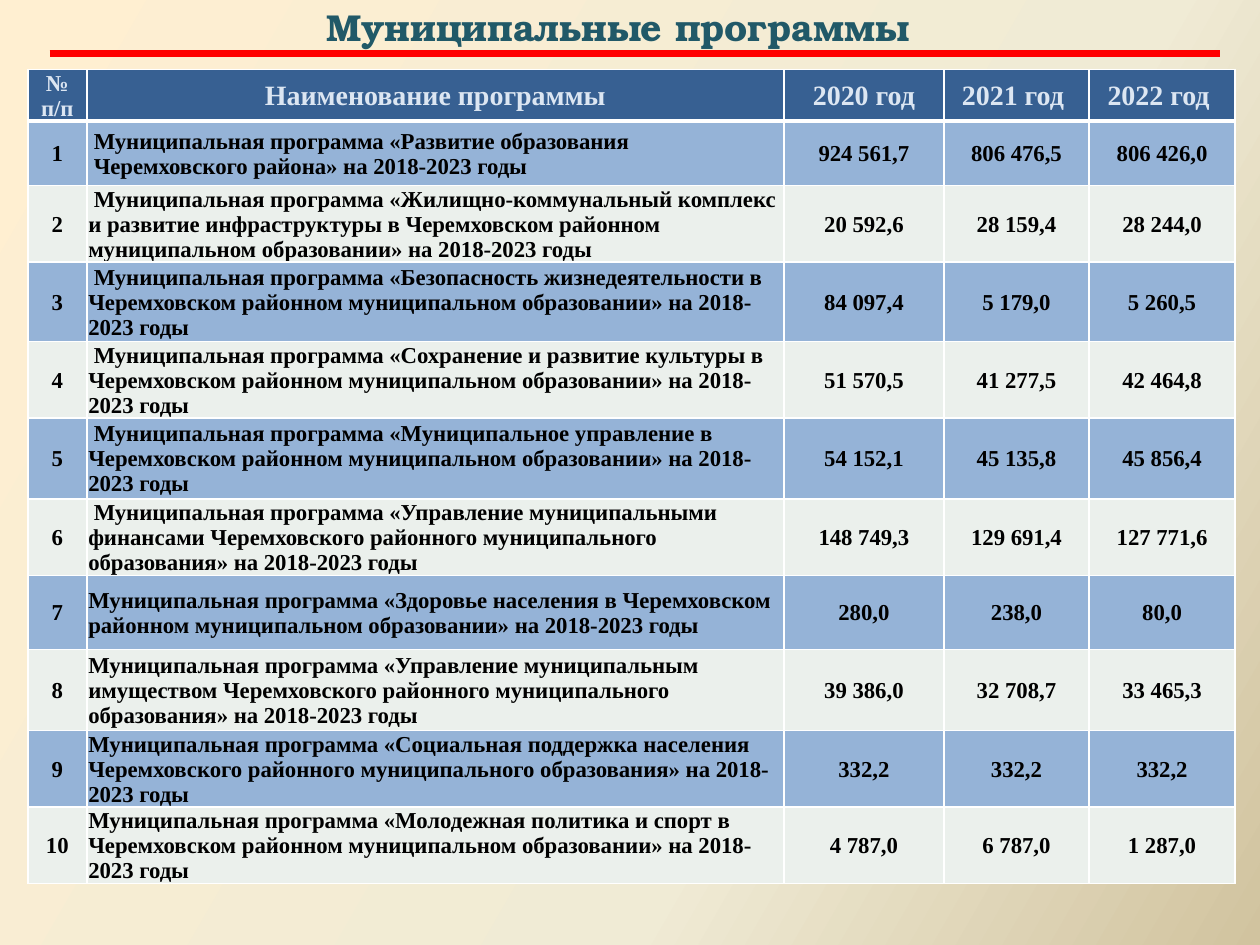
from lxml.etree import SubElement
from pptx import Presentation
from pptx.dml.color import RGBColor
from pptx.enum.shapes import MSO_CONNECTOR
from pptx.enum.text import MSO_ANCHOR as Anchor, PP_ALIGN as Align
from pptx.oxml import parse_xml
from pptx.oxml.ns import nsdecls, qn
from pptx.util import Cm, Pt

# Content
TITLE = "Муниципальные программы"
HEADS = ["№ п/п", "Наименование программы", "2020 год", "2021 год ", "2022 год "]
PREFIX = "Муниципальная программа "
SUFFIX = " на 2018-2023 годы"
PLANS = [
    ("«Развитие образования\nЧеремховского района»",
     "924 561,7", "806 476,5", "806 426,0"),
    ("«Жилищно-коммунальный комплекс и развитие инфраструктуры в "
     "Черемховском районном муниципальном образовании»",
     "20 592,6", "28 159,4", "28 244,0"),
    ("«Безопасность жизнедеятельности в Черемховском районном "
     "муниципальном образовании»", "84 097,4", "5 179,0", "5 260,5"),
    ("«Сохранение и развитие культуры в Черемховском районном "
     "муниципальном образовании»", "51 570,5", "41 277,5", "42 464,8"),
    ("«Муниципальное управление в Черемховском районном "
     "муниципальном образовании»", "54 152,1", "45 135,8", "45 856,4"),
    ("«Управление муниципальными финансами Черемховского районного "
     "муниципального образования»", "148 749,3", "129 691,4", "127 771,6"),
    ("«Здоровье населения в Черемховском районном "
     "муниципальном образовании»", "280,0", "238,0", "80,0"),
    ("«Управление муниципальным имуществом Черемховского районного "
     "муниципального образования»", "39 386,0", "32 708,7", "33 465,3"),
    ("«Социальная поддержка населения Черемховского районного "
     "муниципального образования»", "332,2", "332,2", "332,2"),
    ("«Молодежная политика и спорт в Черемховском районном "
     "муниципальном образовании»", "4 787,0", "6 787,0", "1 287,0"),
]
INDENTED = 6  # the first programmes start with a small indent

# Look
SERIF, BOOK = "Times New Roman", "TeX Gyre Bonum"
NAVY = RGBColor(0x37, 0x60, 0x92)
PALE = RGBColor(0xDC, 0xE6, 0xF2)
BLUE = RGBColor(0x95, 0xB3, 0xD7)
MIST = RGBColor(0xEB, 0xF0, 0xEC)
BLACK = RGBColor(0, 0, 0)
TEAL = RGBColor(0x21, 0x59, 0x68)
RED = RGBColor(0xFF, 0, 0)
WHITE = RGBColor(0xFF, 0xFF, 0xFF)
SHADES = [(0, "FFEFD1"), (65, "F0EBD5"), (100, "D1C39F")]
WIDTHS = [1.19, 14.05, 3.23, 2.92, 2.95]
HEIGHTS = [1.0, 1.3, 1.42, 1.6, 1.47, 1.63, 1.52, 1.5, 1.63, 1.37, 1.4]


def paint_back(slide):
    stops = "".join(f'<a:gs pos="{pos * 1000}"><a:srgbClr val="{tint}"/></a:gs>'
                    for pos, tint in SHADES)
    slide.element.cSld.insert(0, parse_xml(
        f'<p:bg {nsdecls("p", "a")}><p:bgPr><a:gradFill><a:gsLst>{stops}</a:gsLst>'
        '<a:lin ang="1800000" scaled="0"/></a:gradFill><a:effectLst/></p:bgPr></p:bg>'))


def style(par, face, size, color):
    for run in par.runs:
        font = run.font
        font.name, font.size, font.bold = face, Pt(size), True
        font.color.rgb = color


def edge(cell, side, width):
    line = SubElement(cell._tc.get_or_add_tcPr(), qn(f"a:ln{side}"), w=str(Pt(width)))
    fill = SubElement(line, qn("a:solidFill"))
    SubElement(fill, qn("a:srgbClr"), val=str(WHITE))


def fill_cell(cell, text, row, col):
    head = row == 0
    for side in "LRTB":
        thick = (row, side) in [(0, "B"), (1, "T")]
        edge(cell, side, 3 if thick else 1)
    cell.fill.solid()
    cell.fill.fore_color.rgb = NAVY if head else BLUE if row % 2 else MIST
    cell.margin_left = cell.margin_right = cell.margin_top = Cm(0.03)
    cell.margin_bottom = 0
    cell.vertical_anchor = Anchor.MIDDLE
    cell.text_frame.text = text
    named = col == 1 and not head
    for par in cell.text_frame.paragraphs:
        par.alignment = Align.LEFT if named else Align.CENTER
        if named and row <= INDENTED:
            props = par._p.get_or_add_pPr()
            props.set("marL", "0")
            props.set("indent", str(Cm(0.11)))
        style(par, SERIF, 16 if head and col else 13, PALE if head else BLACK)


def add_plans(slide):
    rows = [HEADS] + [[str(num), PREFIX + name + SUFFIX, *sums]
                      for num, (name, *sums) in enumerate(PLANS, 1)]
    table = slide.shapes.add_table(len(rows), len(HEADS), Cm(0.56), Cm(1.4),
                                   Cm(sum(WIDTHS)), Cm(sum(HEIGHTS))).table
    table.horz_banding = False
    for col, width in zip(table.columns, WIDTHS):
        col.width = Cm(width)
    for row, height in zip(table.rows, HEIGHTS):
        row.height = Cm(height)
    for r, row in enumerate(rows):
        for c, text in enumerate(row):
            fill_cell(table.cell(r, c), text, r, c)


def add_title(slide):
    box = slide.shapes.add_textbox(Cm(-0.2), 0, Cm(24.82), Cm(1.09))
    frame = box.text_frame
    frame.word_wrap = True
    frame.vertical_anchor = Anchor.MIDDLE
    frame.margin_left = Cm(0.74)
    frame.text = TITLE
    frame.paragraphs[0].alignment = Align.CENTER
    style(frame.paragraphs[0], BOOK, 21.4, TEAL)


def add_rule(slide):
    rule = slide.shapes.add_connector(MSO_CONNECTOR.STRAIGHT,
                                      Cm(1.0), Cm(1.08), Cm(24.6), Cm(1.08))
    rule.line.color.rgb = RED
    rule.line.width = Pt(3.75)
    SubElement(rule._element.spPr, qn("a:effectLst"))


def main():
    deck = Presentation()
    deck.slide_width, deck.slide_height = Cm(25.4), Cm(19.05)
    slide = deck.slides.add_slide(deck.slide_layouts[6])
    paint_back(slide)
    add_plans(slide)
    add_title(slide)
    add_rule(slide)
    deck.save("out.pptx")


if __name__ == "__main__":
    main()
